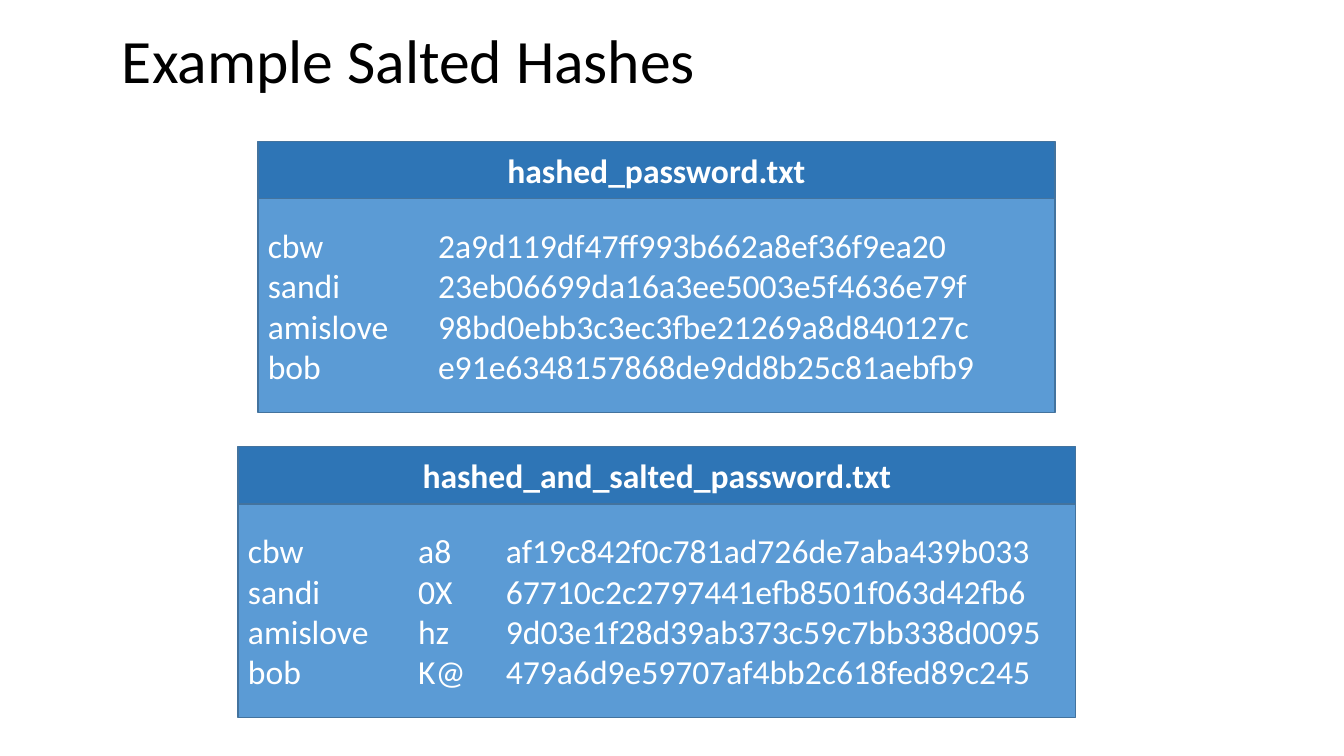
from lxml import etree
from pptx import Presentation
from pptx.dml.color import RGBColor
from pptx.enum.shapes import MSO_SHAPE
from pptx.enum.text import MSO_ANCHOR, PP_ALIGN
from pptx.oxml.ns import qn
from pptx.util import Cm, Pt

RECTANGLE = MSO_SHAPE.RECTANGLE
MIDDLE = MSO_ANCHOR.MIDDLE
LEFT, CENTER = PP_ALIGN.LEFT, PP_ALIGN.CENTER
TITLE_ONLY = 5

COLORS = {
    "title": "000000",
    "text": "FFFFFF",
    "header": "2E75B6",
    "body": "5B9BD5",
    "outline": "43739E",
}
HEADER_HEIGHT = 1.45
BODY_HEIGHT = 5.38

HASHED_ROWS = [
    ("cbw", "2a9d119df47ff993b662a8ef36f9ea20"),
    ("sandi", "23eb06699da16a3ee5003e5f4636e79f"),
    ("amislove", "98bd0ebb3c3ec3fbe21269a8d840127c"),
    ("bob", "e91e6348157868de9dd8b25c81aebfb9"),
]
SALTED_ROWS = [
    ("cbw", "a8", "af19c842f0c781ad726de7aba439b033"),
    ("sandi", "0X", "67710c2c2797441efb8501f063d42fb6"),
    ("amislove", "hz", "9d03e1f28d39ab373c59c7bb338d0095"),
    ("bob", "K@", "479a6d9e59707af4bb2c618fed89c245"),
]


class SlideBuilder:
    def __init__(self, slide, font_name="Calibri"):
        self.slide = slide
        self.font_name = font_name

    def format_font(self, font, size, color, bold=False):
        font.name = self.font_name
        font.size = Pt(size)
        font.bold = bold
        font.color.rgb = RGBColor.from_string(COLORS[color])

    def title(self, text, left, top, width, height):
        title = self.slide.shapes.title
        title.left, title.top = Cm(left), Cm(top)
        title.width, title.height = Cm(width), Cm(height)
        title.text_frame.text = text
        title.text_frame.vertical_anchor = MIDDLE
        paragraph = title.text_frame.paragraphs[0]
        paragraph.alignment = LEFT
        paragraph.line_spacing = 0.9
        self.format_font(paragraph.runs[0].font, 44, "title")

    def set_tabs(self, paragraph, positions):
        properties = paragraph._p.get_or_add_pPr()
        tab_list = etree.SubElement(properties, qn("a:tabLst"))
        for position in positions:
            etree.SubElement(tab_list, qn("a:tab"), pos=str(Cm(position)), algn="l")

    def box(self, group, lines, bounds, fill, alignment=LEFT, bold=False, tabs=()):
        shape = group.shapes.add_shape(RECTANGLE, *map(Cm, bounds))
        shape.shadow.inherit = False
        shape.fill.solid()
        shape.fill.fore_color.rgb = RGBColor.from_string(COLORS[fill])
        shape.line.color.rgb = RGBColor.from_string(COLORS["outline"])
        shape.line.width = Pt(1)
        text_frame = shape.text_frame
        text_frame.text = "\n".join(lines)
        text_frame.word_wrap = True
        text_frame.vertical_anchor = MIDDLE
        for paragraph in text_frame.paragraphs:
            paragraph.alignment = alignment
            if tabs:
                self.set_tabs(paragraph, tabs)
            for run in paragraph.runs:
                self.format_font(run.font, 24, "text", bold)

    def file_panel(self, file_name, rows, left, top, width, tabs):
        """Group a file-name header with the tab-separated rows below it."""
        group = self.slide.shapes.add_group_shape()
        self.box(group, ["\t".join(row) for row in rows],
                 (left, top + HEADER_HEIGHT, width, BODY_HEIGHT), "body", tabs=tabs)
        self.box(group, [file_name], (left, top, width, HEADER_HEIGHT),
                 "header", alignment=CENTER, bold=True)


def main():
    presentation = Presentation()
    presentation.slide_width, presentation.slide_height = Cm(33.87), Cm(19.05)
    layout = presentation.slide_layouts[TITLE_ONLY]
    builder = SlideBuilder(presentation.slides.add_slide(layout))
    builder.title("Example Salted Hashes", 2.82, 0, 25.6, 3.18)
    builder.file_panel("hashed_and_salted_password.txt", SALTED_ROWS,
                       6, 11.25, 21.11, tabs=(4.29, 6.5))
    builder.file_panel("hashed_password.txt", HASHED_ROWS,
                       6.5, 3.56, 20.09, tabs=(4.29,))
    presentation.save("out.pptx")


if __name__ == "__main__":
    main()
